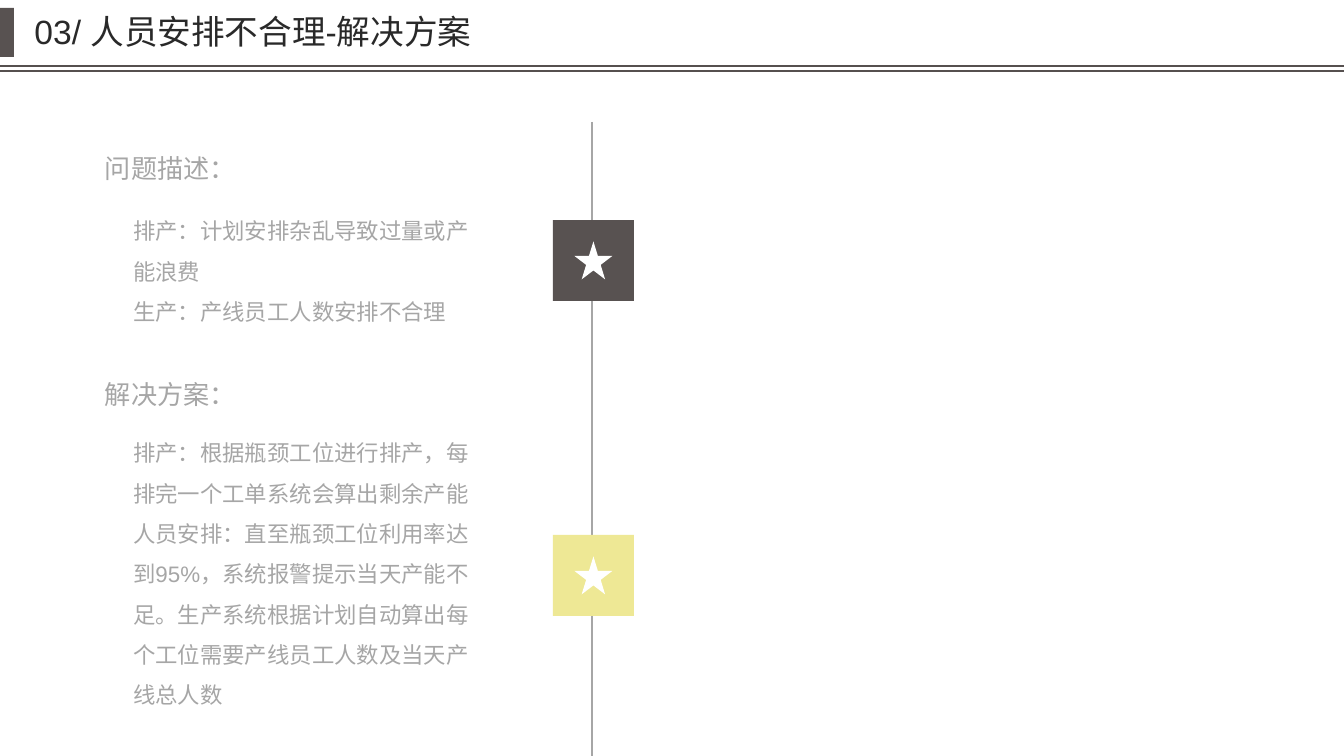
from lxml.etree import SubElement
from pptx import Presentation
from pptx.dml.color import RGBColor
from pptx.enum.shapes import MSO_CONNECTOR as Connector, MSO_SHAPE as Shape
from pptx.enum.text import MSO_ANCHOR as Anchor, MSO_AUTO_SIZE as AutoSize, PP_ALIGN as Align
from pptx.oxml.ns import qn
from pptx.util import Emu, Pt

PX = 914400 / 134.4
WIDTH, HEIGHT = 1344, 756
DARK = RGBColor(0x58, 0x52, 0x51)
RULE = RGBColor(0x56, 0x50, 0x4F)
GREY = RGBColor(0xA6, 0xA6, 0xA6)
INK = RGBColor(0x29, 0x29, 0x29)
YELLOW = RGBColor(0xEE, 0xE8, 0x95)
WHITE = RGBColor(0xFF, 0xFF, 0xFF)


def px(length):
    return Emu(round(length * PX))


class SlideBuilder:
    """Holds the current slide and the shared look of its elements."""

    frame_format = dict(word_wrap=True, auto_size=AutoSize.NONE)
    no_margins = dict(margin_left=0, margin_top=0, margin_right=0, margin_bottom=0)

    def __init__(self, slide):
        self.slide = slide

    @staticmethod
    def apply(target, values):
        for name, value in values.items():
            setattr(target, name, value)

    def block(self, shapes, kind, left, top, width, height, color):
        block = shapes.add_shape(kind, px(left), px(top), px(width), px(height))
        block.shadow.inherit = False
        block.fill.solid()
        block.fill.fore_color.rgb = color
        block.line.fill.background()

    def line(self, x1, y1, x2, y2, color):
        line = self.slide.shapes.add_connector(
            Connector.STRAIGHT, px(x1), px(y1), px(x2), px(y2))
        line.line.color.rgb = color
        line.line.width = Pt(0.75)
        SubElement(line._element.spPr, qn("a:effectLst"))

    def star_badge(self, left, top, color, side=81, star=38):
        badge = self.slide.shapes.add_group_shape()
        inset = (side - star) / 2
        self.block(badge.shapes, Shape.RECTANGLE, left, top, side, side, color)
        self.block(badge.shapes, Shape.STAR_5_POINT, left + inset, top + inset,
                   star, star, WHITE)

    def text(self, idx, box, lines, size, color, font="Arial", spacing=1.0,
             anchor=Anchor.TOP, margins=no_margins):
        holder = self.slide.placeholders[idx]
        self.apply(holder, dict(zip(("left", "top", "width", "height"), map(px, box))))
        frame = holder.text_frame
        self.apply(frame, {**self.frame_format, **margins, "vertical_anchor": anchor})
        frame.text = "\n".join(lines)
        for paragraph in frame.paragraphs:
            props = paragraph._p.get_or_add_pPr()
            props.set("marL", "0")
            props.set("indent", "0")
            SubElement(props, qn("a:buNone"))
            self.apply(paragraph, dict(alignment=Align.LEFT, line_spacing=spacing,
                                       space_before=Pt(0)))
            for run in paragraph.runs:
                self.apply(run.font, dict(name=font, size=Pt(size), bold=False))
                run.font.color.rgb = color


def main():
    deck = Presentation()
    deck.slide_width, deck.slide_height = px(WIDTH), px(HEIGHT)
    comparison = deck.slide_layouts[4]
    slide = deck.slides.add_slide(comparison)
    for footer in list(slide.placeholders)[5:]:
        footer._element.getparent().remove(footer._element)
    page = SlideBuilder(slide)

    # Header
    page.block(slide.shapes, Shape.RECTANGLE, 0, 8, 14, 49, DARK)
    for rule_y in (66, 71):
        page.line(0, rule_y, WIDTH, rule_y, RULE)
    page.text(0, (21, 4, 843, 52), ["03/ 人员安排不合理-解决方案"], 18, INK,
              margins={})

    # Timeline
    page.line(592, 122, 592, HEIGHT, GREY)
    for badge_top, color in ((220, DARK), (535, YELLOW)):
        page.star_badge(553, badge_top, color)

    # Problem and solution
    sections = (
        ("问题描述：", 152, 204, 142, "Noto Sans CJK SC",
         ["排产：计划安排杂乱导致过量或产能浪费",
          "生产：产线员工人数安排不合理"]),
        ("解决方案：", 378, 426, 285, "Arial",
         ["排产：根据瓶颈工位进行排产，每排完一个工单系统会算出剩余产能",
          "人员安排：直至瓶颈工位利用率达到95%，系统报警提示当天产能不足。"
          "生产系统根据计划自动算出每个工位需要产线员工人数及当天产线总人数"]),
    )
    for order, (heading, heading_top, body_top, height, font, body) in enumerate(sections):
        page.text(2 * order + 1, (105, heading_top, 323, 32), [heading], 14, GREY)
        page.text(2 * order + 2, (133, body_top, 341, height), body, 12, GREY,
                  font=font, spacing=1.5)

    deck.save("out.pptx")


if __name__ == "__main__":
    main()
